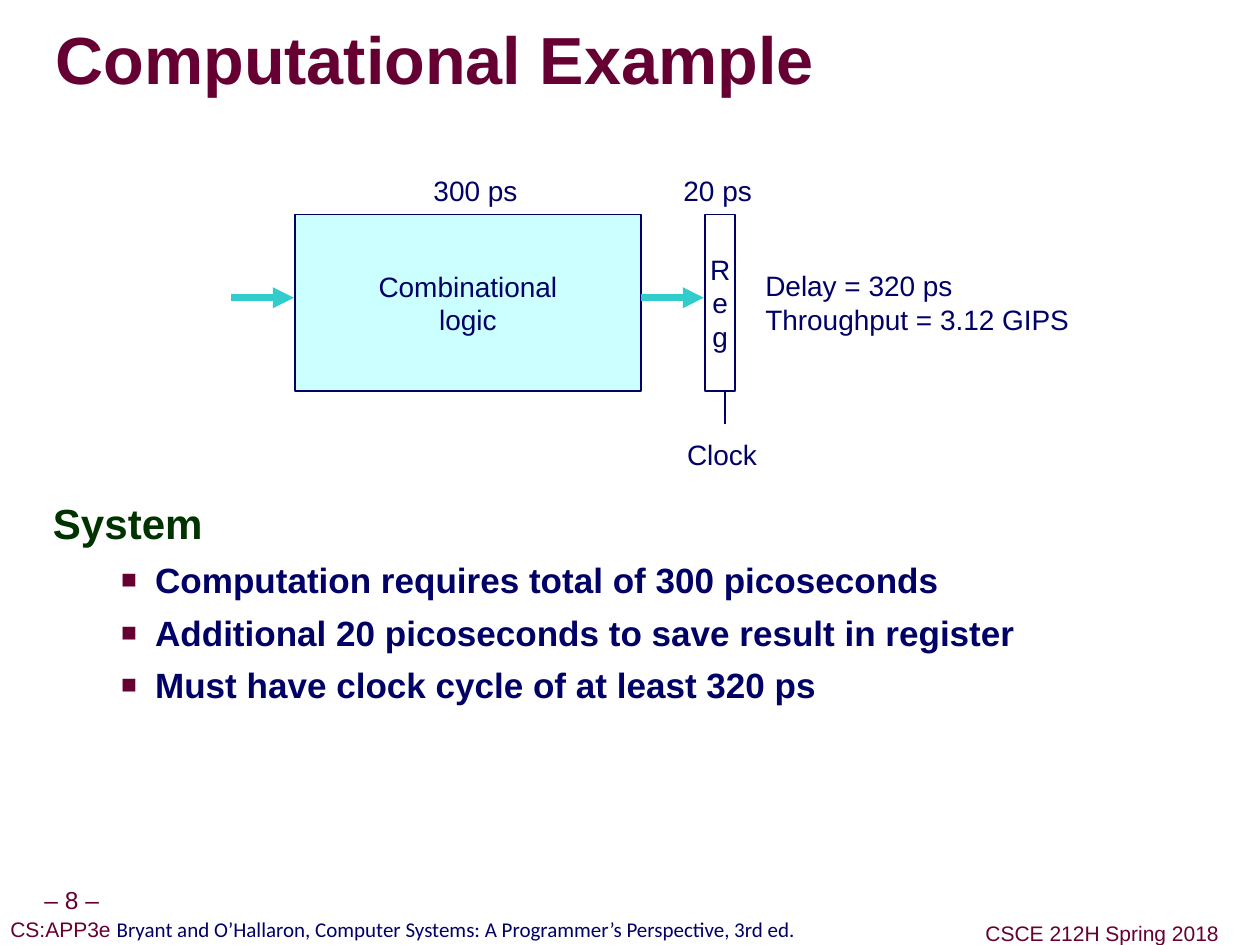
from dataclasses import dataclass
from pptx import Presentation
from pptx.dml.color import RGBColor
from pptx.enum.shapes import MSO_CONNECTOR, MSO_SHAPE
from pptx.enum.text import MSO_ANCHOR, MSO_AUTO_SIZE, PP_ALIGN
from pptx.oxml import parse_xml
from pptx.oxml.ns import nsdecls
from pptx.util import Pt

UNIT = 9144  # EMU per px, 100 px to the inch


@dataclass(frozen=True)
class Theme:
    wine: str = "660033"
    navy: str = "000066"
    green: str = "003300"
    pale: str = "CCFFFF"
    teal: str = "33CCCC"
    white: str = "FFFFFF"
    grey: str = "969696"
    sans: str = "Arial"
    alt: str = "Calibri"
    title: int = 38
    head: int = 24
    item: int = 20
    label: int = 16
    page: int = 14
    foot: int = 12


LOOK = Theme()
CENTRE = {"alignment": PP_ALIGN.CENTER}
LEFT = {"alignment": PP_ALIGN.LEFT}
FOOT = CENTRE | {"line_spacing": 0.9}


def px(*vals):
    return [val * UNIT for val in vals]


def put(obj, vals):
    for name, val in vals.items():
        setattr(obj, name, val)


def place(shape, box):
    put(shape, dict(zip(("left", "top", "width", "height"), px(*box))))


def frame(shape, pad, anchor=MSO_ANCHOR.TOP, wrap=False):
    text = shape.text_frame
    side, edge = px(*pad)
    put(text, {"margin_left": side, "margin_right": side, "margin_top": edge,
               "margin_bottom": edge, "vertical_anchor": anchor,
               "word_wrap": wrap, "auto_size": MSO_AUTO_SIZE.NONE})
    return text


def style(run, size, color, face=LOOK.sans, bold=False):
    put(run.font, {"size": Pt(size), "name": face, "bold": bold})
    run.font.color.rgb = RGBColor.from_string(color)


def write(text, lines, form):
    """Fill a frame; each line is a list of (words, *style) runs."""
    for num, line in enumerate(lines):
        para = text.add_paragraph() if num else text.paragraphs[0]
        put(para, form)
        for words, *looks in line:
            run = para.add_run()
            run.text = words
            style(run, *looks)


def label(slide, box, lines, form=CENTRE):
    shape = slide.shapes.add_textbox(*px(*box))
    rows = [[(line, LOOK.label, LOOK.navy)] for line in lines]
    write(frame(shape, (10, 5)), rows, form)


def block(slide, box, lines, fill):
    shape = slide.shapes.add_shape(MSO_SHAPE.RECTANGLE, *px(*box))
    shape.shadow.inherit = False
    shape.fill.solid()
    shape.fill.fore_color.rgb = RGBColor.from_string(fill)
    shape.line.color.rgb = RGBColor.from_string(LOOK.navy)
    shape.line.width = Pt(1)
    rows = [[(line, LOOK.label, LOOK.navy)] for line in lines]
    write(frame(shape, (10, 5), MSO_ANCHOR.MIDDLE), rows, CENTRE)


def wire(slide, start, end, color, width, arrow=False):
    line = slide.shapes.add_connector(MSO_CONNECTOR.STRAIGHT,
                                      *px(*start, *end))
    line.line.color.rgb = RGBColor.from_string(color)
    line.line.width = Pt(width)
    if arrow:
        line.line._get_or_add_ln().append(
            parse_xml(f'<a:tailEnd {nsdecls("a")} type="triangle"/>'))
    line._element.spPr.append(parse_xml(f'<a:effectLst {nsdecls("a")}/>'))


def heading(slide, box):
    shape = slide.shapes.title
    place(shape, box)
    text = frame(shape, (0, 0), MSO_ANCHOR.MIDDLE, True)
    write(text, [[("Computational Example", LOOK.title, LOOK.wine,
                   LOOK.sans, True)]], LEFT | {"line_spacing": 0.87})
    props = text.paragraphs[0].runs[0].font._element
    shade = parse_xml(
        f'<a:effectLst {nsdecls("a")}><a:outerShdw dist="45720" dir="2700000">'
        f'<a:srgbClr val="{LOOK.grey}"/></a:outerShdw></a:effectLst>')
    props.find("{*}solidFill").addnext(shade)


def circuit(slide, box):
    left, top, _, _ = box
    face, mid = top + 37, top + 103
    logic, reg, high, gap = left + 51, left + 376, 140, 50
    block(slide, (logic, face, 274, high), ["Combinational", "logic"],
          LOOK.pale)
    block(slide, (reg, face, 24, high), "Reg", LOOK.white)
    for end in (logic, reg):
        wire(slide, (end - 1 - gap, mid), (end - 1, mid), LOOK.teal, 4, True)
    foot = face + high + 1
    wire(slide, (left + 392, foot), (left + 392, foot + 25), LOOK.navy, 1)
    label(slide, (left + 151, top, 86, 36), ["300 ps"])
    label(slide, (left + 349, top, 74, 36), ["20 ps"])
    label(slide, (left + 352, top + 209, 75, 36), ["Clock"])
    label(slide, (left + 414, top + 75, 273, 63),
          ["Delay = 320 ps", "Throughput = 3.12 GIPS"], LEFT)


def indent(para, left, hang):
    props = para._p.get_or_add_pPr()
    put(props, {})
    for name, val in zip(("marL", "indent"), px(left, -hang)):
        props.set(name, str(val))
    return props


def system(slide, box):
    shape = slide.placeholders[1]
    place(shape, box)
    text = frame(shape, (10, 5), wrap=True)
    items = ("Computation requires total of 300 picoseconds",
             "Additional 20 picoseconds to save result in register",
             "Must have clock cycle of at least 320 ps")
    rows = [[("System", LOOK.head, LOOK.green, LOOK.sans, True)]]
    rows += [[(item, LOOK.item, LOOK.navy, LOOK.sans, True)]
             for item in items]
    write(text, rows, LEFT)
    head, *rest = text.paragraphs
    put(head, {"line_spacing": 0.95, "space_before": Pt(0)})
    indent(head, 42, 42).append(parse_xml(f'<a:buNone {nsdecls("a")}/>'))
    for para in rest:
        put(para, {"level": 1, "space_before": Pt(5.75)})
        props = indent(para, 81, 27)
        for mark in (f'buClr {nsdecls("a")}><a:srgbClr val="{LOOK.wine}"/>'
                     '</a:buClr>',
                     f'buSzPct {nsdecls("a")} val="75000"/>',
                     f'buFont {nsdecls("a")} typeface="{LOOK.sans}"/>',
                     f'buChar {nsdecls("a")} char="■"/>'):
            props.append(parse_xml("<a:" + mark))


def footer(slide, box):
    left, top, _, _ = box
    book = ("Bryant and O’Hallaron, Computer Systems: "
            "A Programmer’s Perspective, 3rd ed.")
    parts = (
        ((24, 0, 66, 31), [("– 8 –", LOOK.page, LOOK.wine)]),
        ((0, 25, 639, 28), [("CS:APP3e ", LOOK.foot, LOOK.wine),
                            (book, LOOK.foot, LOOK.navy, LOOK.alt)]),
        ((776, 28, 196, 28),
         [("CSCE 212H Spring 2018", LOOK.foot, LOOK.wine)]))
    for (x, y, wide, high), runs in parts:
        shape = slide.shapes.add_textbox(*px(left + x, top + y, wide, high))
        write(frame(shape, (5, 5), MSO_ANCHOR.MIDDLE), [runs], FOOT)


def main():
    deck = Presentation()
    put(deck, dict(zip(("slide_width", "slide_height"), px(999, 749))))
    slide = deck.slides.add_slide(deck.slide_layouts[1])
    footer(slide, (0, 699, 999, 50))
    heading(slide, (44, 8, 952, 85))
    system(slide, (32, 392, 907, 312))
    circuit(slide, (183, 133, 687, 245))
    deck.save("out.pptx")


if __name__ == "__main__":
    main()
